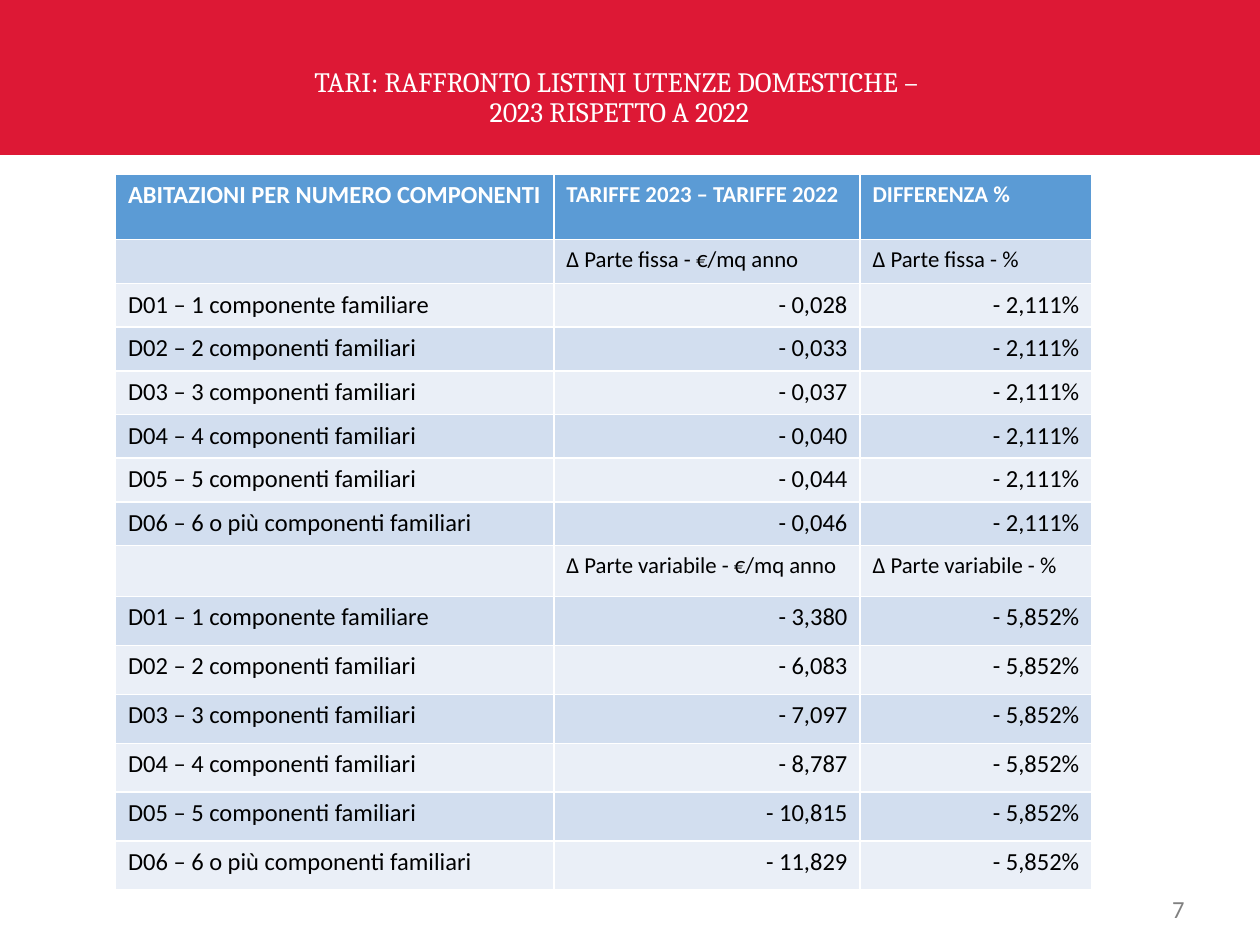
"""Build the slide comparing the 2023 and 2022 TARI rates for households."""
from pptx import Presentation, util as u
from pptx.dml.color import RGBColor
from pptx.enum import shapes, text

Pt = u.Pt
COLORS = {"red": "DD1835", "white": "FFFFFF", "black": "000000", "grey": "808080",
          "header": "5B9BD5", "dark": "D2DEEF", "light": "EAEFF7"}


def style(p, size, color, align, name="Calibri", bold=False):
    p.alignment = align
    p.font.size = Pt(size)
    p.font.name = name
    p.font.bold = bold
    p.font.color.rgb = RGBColor.from_string(COLORS[color])


def add_text(s, box, words, anchor):
    tf = s.shapes.add_textbox(*[Pt(v) for v in box]).text_frame
    tf.word_wrap = True
    tf.vertical_anchor = anchor
    tf.text = words
    return tf.paragraphs[0]


prs = Presentation()
prs.slide_width, prs.slide_height = Pt(720), Pt(540)
s = prs.slides.add_slide(prs.slide_layouts[6])
left, center, right = text.PP_ALIGN.LEFT, text.PP_ALIGN.CENTER, text.PP_ALIGN.RIGHT

band = s.shapes.add_shape(shapes.MSO_SHAPE.RECTANGLE, 0, 0, Pt(720), Pt(88.5))
band.shadow.inherit = False
band.fill.solid()
band.fill.fore_color.rgb = RGBColor.from_string(COLORS["red"])
band.line.fill.background()

title = "TARI: RAFFRONTO LISTINI UTENZE DOMESTICHE – \v2023 RISPETTO A 2022"
p = add_text(s, (116, 28, 476, 49), title, text.MSO_ANCHOR.BOTTOM)
p.line_spacing = 0.9
style(p, 16, "white", center, "Cambria")

p = add_text(s, (516, 508.5, 168, 21), "7", text.MSO_ANCHOR.MIDDLE)
style(p, 14, "grey", right)

homes = ["D01 – 1 componente familiare"]
homes += [f"D0{n} – {n} componenti familiari" for n in range(2, 6)]
homes.append("D06 – 6 o più componenti familiari")
fixed = ["0,028", "0,033", "0,037", "0,040", "0,044", "0,046"]
variable = ["3,380", "6,083", "7,097", "8,787", "10,815", "11,829"]

rows = [("ABITAZIONI PER NUMERO COMPONENTI", "TARIFFE 2023 – TARIFFE 2022", "DIFFERENZA %")]
for part, values, percent in (("fissa", fixed, "2,111"), ("variabile", variable, "5,852")):
    rows.append(("", f"∆ Parte {part} - €/mq anno", f"∆ Parte {part} - %"))
    rows += [(home, f"- {value}", f"- {percent}%") for home, value in zip(homes, values)]

widths = [250.5, 175, 132.5]
heights = [37.5] + [25] * 7 + [29] + [28] * 6
table = s.shapes.add_table(len(rows), len(widths), Pt(66), Pt(99.5),
                           Pt(sum(widths)), Pt(sum(heights))).table
for column, width in zip(table.columns, widths):
    column.width = Pt(width)
for i, (row, height) in enumerate(zip(rows, heights)):
    table.rows[i].height = Pt(height)
    is_header = i == 0
    fill = "header" if is_header else ("light", "dark")[i % 2]
    for j, words in enumerate(row):
        cell = table.cell(i, j)
        cell.fill.solid()
        cell.fill.fore_color.rgb = RGBColor.from_string(COLORS[fill])
        cell.text = words
        if not words:
            cell.margin_top = cell.margin_bottom = 0
        is_label = is_header or not row[0]
        style(cell.text_frame.paragraphs[0],
              13 if is_label and j else 14,
              "white" if is_header else "black",
              left if is_label or j == 0 else right,
              bold=is_header)

prs.save("out.pptx")
